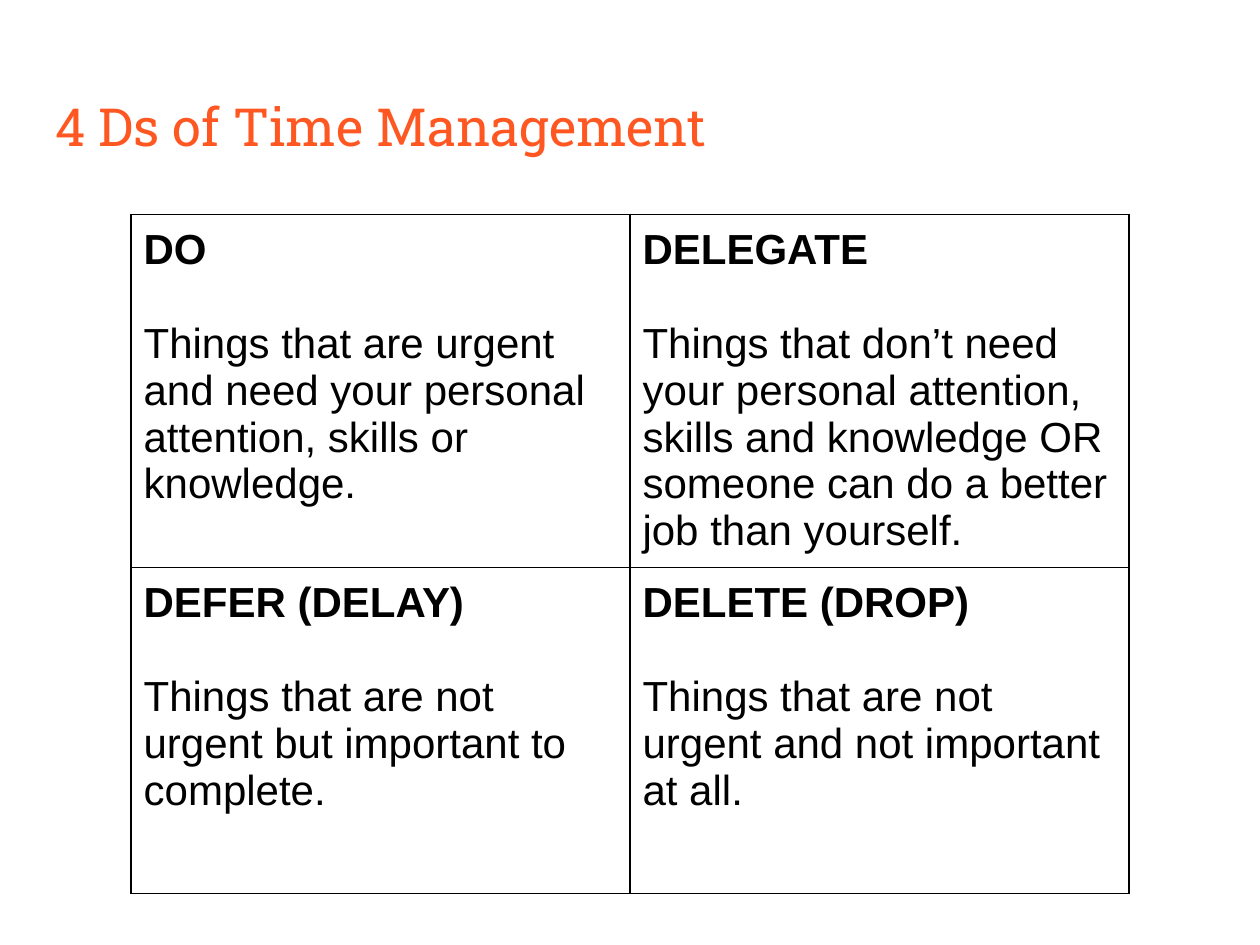
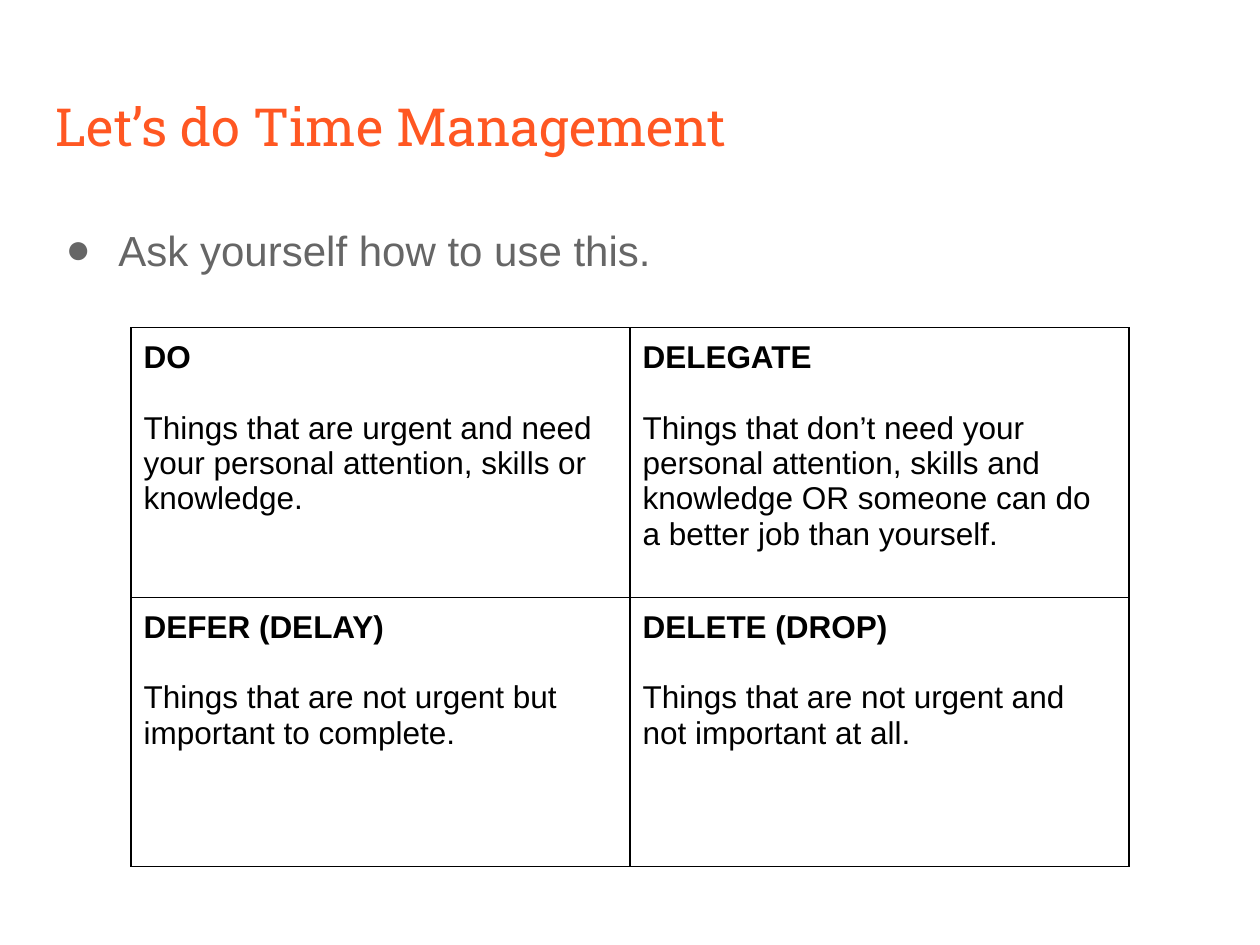
from dataclasses import dataclass
from typing import Any, Optional

from lxml.etree import SubElement
from pptx import Presentation
from pptx.dml.color import RGBColor
from pptx.enum.text import MSO_ANCHOR, MSO_AUTO_SIZE, PP_ALIGN
from pptx.oxml.ns import qn
from pptx.util import Inches, Pt


@dataclass(frozen=True)
class Theme:
    background: RGBColor = RGBColor(0xFF, 0xFF, 0xFF)
    title_color: RGBColor = RGBColor(0xFF, 0x57, 0x22)
    body_color: RGBColor = RGBColor(0x66, 0x66, 0x66)
    table_color: RGBColor = RGBColor(0, 0, 0)
    title_font: str = "Roboto Slab"
    body_font: str = "Arial"
    title_size: int = 30
    body_size: int = 24
    border_width: float = 0.75
    line_height: float = 1.117


@dataclass(frozen=True)
class Quadrant:
    heading: str
    description: str


@dataclass(frozen=True)
class MatrixSlide:
    title: str
    table_top: float
    row_height: float
    text_size: int
    bullet: Optional[str] = None


THEME = Theme()
TITLE_ONLY_LAYOUT, TITLE_AND_BODY_LAYOUT = 5, 1
TEXT_LEFT, TEXT_WIDTH = 0.34, 9.32
TABLE_LEFT, COLUMN_WIDTH, COLUMN_COUNT = 1.04, 3.96, 2
MARGINS = {f"margin_{side}": Inches(0.1) for side in ("left", "top", "right", "bottom")}

QUADRANTS = [
    Quadrant("DO", "Things that are urgent and need your personal attention, skills or knowledge."),
    Quadrant("DELEGATE", "Things that don’t need your personal attention, skills and knowledge "
                         "OR someone can do a better job than yourself."),
    Quadrant("DEFER (DELAY)", "Things that are not urgent but important to complete."),
    Quadrant("DELETE (DROP)", "Things that are not urgent and not important at all."),
]

SLIDES = [
    MatrixSlide("4 Ds of Time Management", 1.7, 2.59, 24),
    MatrixSlide("Let’s do Time Management", 2.6, 2.14, 18, "Ask yourself how to use this."),
]


def apply_format(target: Any, values: dict[str, Any]) -> None:
    for name, value in values.items():
        setattr(target, name, value)


def format_font(paragraph: Any, font: str, size: int, color: RGBColor, bold: bool = False) -> None:
    for run in paragraph.runs:
        apply_format(run.font, {"name": font, "size": Pt(size), "bold": bold})
        run.font.color.rgb = color


def fill_placeholder(shape: Any, text: str, top: float, height: float) -> Any:
    """Place a text placeholder and return its only paragraph."""
    apply_format(shape, {"left": Inches(TEXT_LEFT), "top": Inches(top),
                         "width": Inches(TEXT_WIDTH), "height": Inches(height)})
    frame = shape.text_frame
    frame.text = text
    apply_format(frame, {**MARGINS, "word_wrap": True, "auto_size": MSO_AUTO_SIZE.NONE,
                         "vertical_anchor": MSO_ANCHOR.TOP})
    paragraph = frame.paragraphs[0]
    apply_format(paragraph, {"alignment": PP_ALIGN.LEFT, "space_before": Pt(0)})
    return paragraph


def add_bullet(paragraph: Any, color: RGBColor) -> None:
    properties = paragraph._p.get_or_add_pPr()
    properties.set("marL", str(Inches(0.5)))
    properties.set("indent", str(Inches(-0.42)))
    bullet_color = SubElement(properties, qn("a:buClr"))
    SubElement(bullet_color, qn("a:srgbClr"), val=str(color))
    SubElement(properties, qn("a:buFont"), typeface=THEME.body_font)
    SubElement(properties, qn("a:buChar"), char="●")


def add_borders(cell: Any) -> None:
    properties = cell._tc.get_or_add_tcPr()
    for position, side in enumerate(("lnL", "lnR", "lnT", "lnB")):
        line = properties.makeelement(qn(f"a:{side}"), {"w": str(Pt(THEME.border_width))})
        fill = SubElement(line, qn("a:solidFill"))
        SubElement(fill, qn("a:srgbClr"), val=str(THEME.table_color))
        properties.insert(position, line)


def fill_cell(cell: Any, quadrant: Quadrant, size: int) -> None:
    apply_format(cell, {**MARGINS, "vertical_anchor": MSO_ANCHOR.TOP})
    cell.fill.background()
    add_borders(cell)
    cell.text = f"{quadrant.heading}\n{quadrant.description}"
    heading, description = cell.text_frame.paragraphs
    format_font(heading, THEME.body_font, size, THEME.table_color, bold=True)
    format_font(description, THEME.body_font, size, THEME.table_color)
    # One line of space below the heading
    heading.space_after = Pt(size * THEME.line_height)


def add_matrix(slide: Any, content: MatrixSlide) -> None:
    row_count = len(QUADRANTS) // COLUMN_COUNT
    table = slide.shapes.add_table(
        row_count, COLUMN_COUNT, Inches(TABLE_LEFT), Inches(content.table_top),
        Inches(COLUMN_WIDTH * COLUMN_COUNT), Inches(content.row_height * row_count)).table
    apply_format(table, {"first_row": False, "horz_banding": False})
    for index, quadrant in enumerate(QUADRANTS):
        fill_cell(table.cell(*divmod(index, COLUMN_COUNT)), quadrant, content.text_size)


def add_matrix_slide(presentation: Any, content: MatrixSlide) -> None:
    layout = TITLE_AND_BODY_LAYOUT if content.bullet else TITLE_ONLY_LAYOUT
    slide = presentation.slides.add_slide(presentation.slide_layouts[layout])

    # Title
    title = fill_placeholder(slide.shapes.title, content.title, 0.65, 0.83)
    format_font(title, THEME.title_font, THEME.title_size, THEME.title_color)

    # Bulleted body
    if content.bullet:
        body = fill_placeholder(slide.placeholders[1], content.bullet, 1.68, 4.98)
        format_font(body, THEME.body_font, THEME.body_size, THEME.body_color)
        add_bullet(body, THEME.body_color)

    # Four-quadrant table
    add_matrix(slide, content)


def main() -> None:
    presentation = Presentation()
    apply_format(presentation, {"slide_width": Inches(10), "slide_height": Inches(7.5)})
    background = presentation.slide_master.background.fill
    background.solid()
    background.fore_color.rgb = THEME.background
    for content in SLIDES:
        add_matrix_slide(presentation, content)
    presentation.save("out.pptx")


if __name__ == "__main__":
    main()
